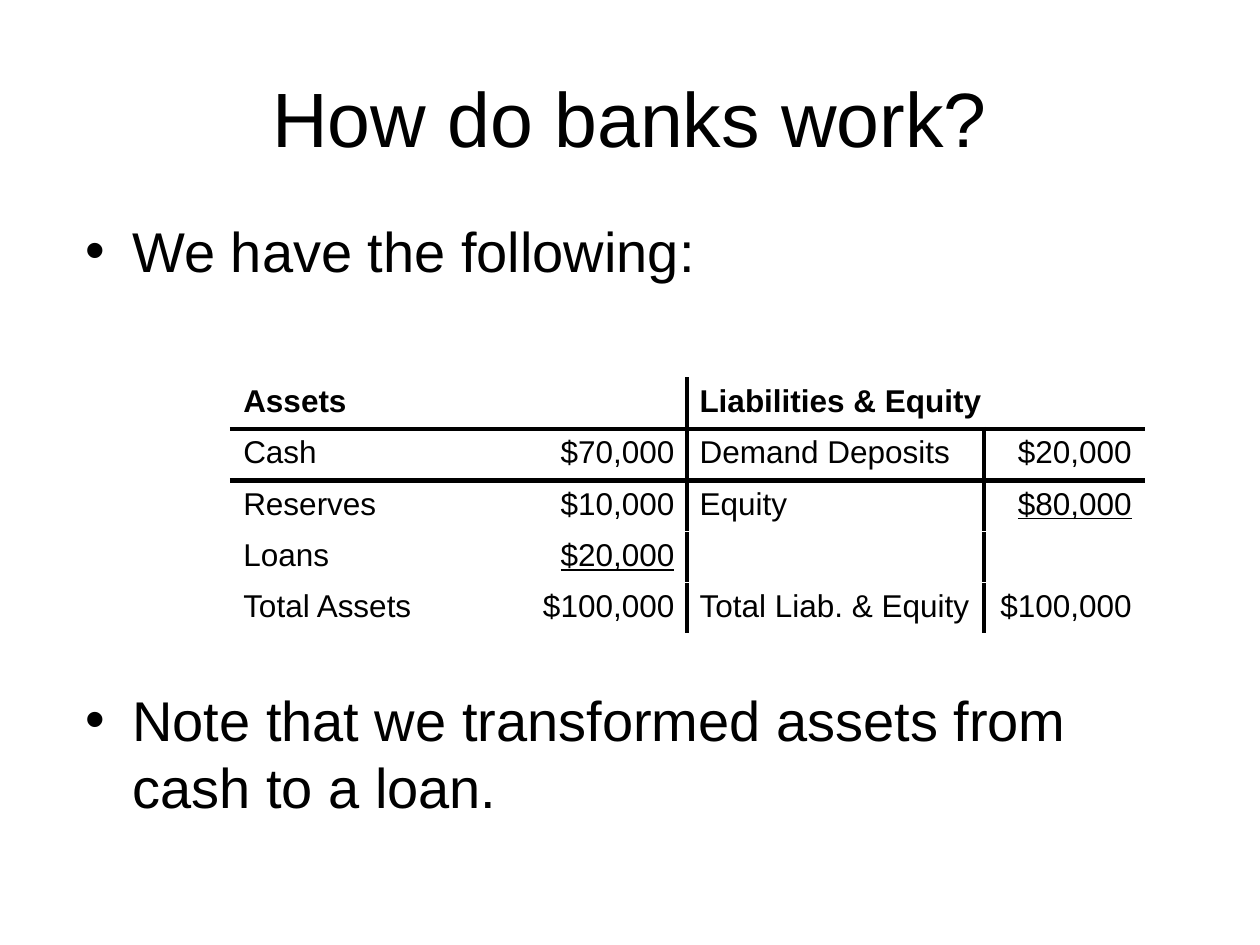
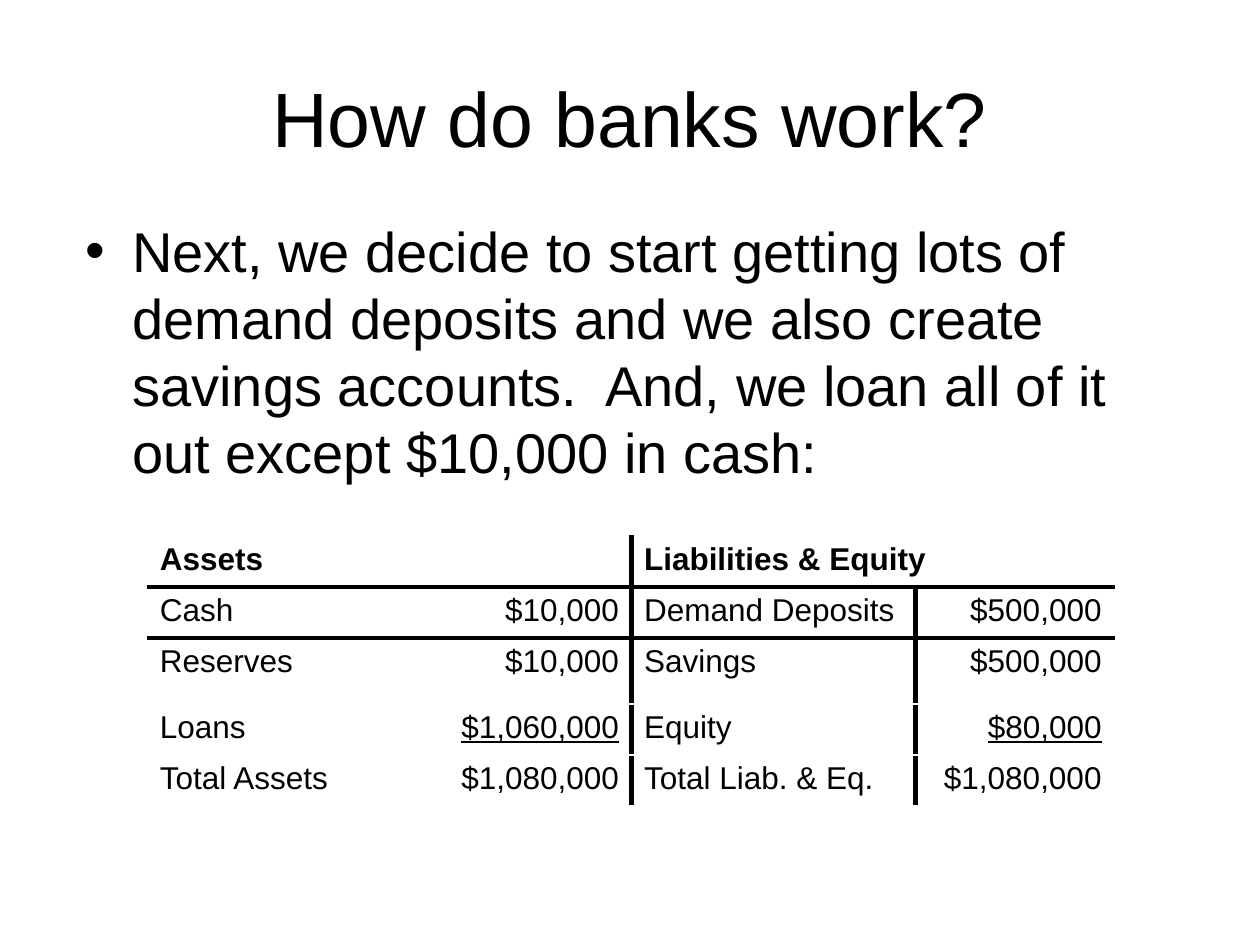
import dataclasses

import lxml.etree
import pptx
import pptx.dml.color
import pptx.enum.text
import pptx.oxml.ns
import pptx.util

Cm = pptx.util.Cm
Pt = pptx.util.Pt
Align = pptx.enum.text.PP_ALIGN
Anchor = pptx.enum.text.MSO_ANCHOR
qn = pptx.oxml.ns.qn

BLACK = pptx.dml.color.RGBColor(0, 0, 0)
WHITE = pptx.dml.color.RGBColor(255, 255, 255)
FONT = "Arial"
TITLE = "How do banks work?"
HEAD = ("Assets", "", "Liabilities & Equity", "")
ROW = 1.03


@dataclasses.dataclass(frozen=True)
class Box:
    left: float
    top: float
    width: float
    height: float


@dataclasses.dataclass(frozen=True)
class Sheet:
    left: float
    top: float
    cols: tuple[float, ...]
    rows: tuple[float, ...]
    lines: tuple[tuple[str, ...], ...]


@dataclasses.dataclass(frozen=True)
class Page:
    points: tuple[str, ...]
    gap: float
    sheet: Sheet


TITLE_BOX = Box(1.27, 0.76, 22.86, 3.18)
BODY_BOX = Box(1.47, 4.24, 22.86, 12.57)

PAGES = (
    Page(
        ("We have the following:", "Note that we transformed assets from cash to a loan."),
        230,
        Sheet(4.65, 7.62, (4.6, 4.6, 5.99, 3.23), (ROW,) * 5, (
            HEAD,
            ("Cash", "$70,000", "Demand Deposits", "$20,000"),
            ("Reserves", "$10,000", "Equity", "$80,000"),
            ("Loans", "$20,000", "", ""),
            ("Total Assets", "$100,000", "Total Liab. & Equity", "$100,000"),
        )),
    ),
    Page(
        ("Next, we decide to start getting lots of demand deposits and we also create "
         "savings accounts.  And, we loan all of it out except $10,000 in cash:",),
        0,
        Sheet(2.97, 10.8, (4.88, 4.88, 5.72, 4.01), (ROW, ROW, 1.33, ROW, ROW), (
            HEAD,
            ("Cash", "$10,000", "Demand Deposits", "$500,000"),
            ("Reserves", "$10,000", "Savings", "$500,000"),
            ("Loans", "$1,060,000", "Equity", "$80,000"),
            ("Total Assets", "$1,080,000", "Total Liab. & Eq.", "$1,080,000"),
        )),
    ),
)


def style(para, size: float, bold: bool = False, under: bool = False) -> None:
    for run in para.runs:
        run.font.name = FONT
        run.font.size = Pt(size)
        run.font.bold = bold
        run.font.underline = under
        run.font.color.rgb = BLACK


def add_text(slide, box: Box, lines: tuple[str, ...], size: float, pitch: float):
    shape = slide.shapes.add_textbox(Cm(box.left), Cm(box.top), Cm(box.width), Cm(box.height))
    frame = shape.text_frame
    frame.word_wrap = True
    frame.text = "\n".join(lines)
    for para in frame.paragraphs:
        para.line_spacing = Pt(pitch)
        style(para, size)
    return frame


def add_title(slide) -> None:
    frame = add_text(slide, TITLE_BOX, (TITLE,), 44, 52.7)
    frame.vertical_anchor = Anchor.MIDDLE
    frame.paragraphs[0].alignment = Align.CENTER


def add_points(slide, page: Page) -> None:
    frame = add_text(slide, BODY_BOX, page.points, 32, 38.3)
    for index, para in enumerate(frame.paragraphs):
        if index:
            para.space_before = Pt(page.gap)
        props = para._p.get_or_add_pPr()
        props.set("marL", str(Cm(0.95)))
        props.set("indent", str(-Cm(0.95)))
        lxml.etree.SubElement(props, qn("a:buFont"), typeface=FONT)
        lxml.etree.SubElement(props, qn("a:buChar"), char="•")


def add_edges(cell, dark: dict[str, bool]) -> None:
    props = cell._tc.get_or_add_tcPr()
    for index, (side, black) in enumerate(dark.items()):
        line = lxml.etree.Element(qn(f"a:ln{side}"), w=str(Pt(3 if black else 1)))
        fill = lxml.etree.SubElement(line, qn("a:solidFill"))
        lxml.etree.SubElement(fill, qn("a:srgbClr"), val=str(BLACK if black else WHITE))
        props.insert(index, line)


def add_sheet(slide, sheet: Sheet) -> None:
    last = len(sheet.rows) - 1
    frame = slide.shapes.add_table(
        len(sheet.rows), len(sheet.cols), Cm(sheet.left), Cm(sheet.top),
        Cm(sum(sheet.cols)), Cm(sum(sheet.rows)))
    table = frame.table
    table.first_row = False
    table.horz_banding = False
    for col, width in zip(table.columns, sheet.cols):
        col.width = Cm(width)
    for row, height in zip(table.rows, sheet.rows):
        row.height = Cm(height)
    table.cell(0, 2).merge(table.cell(0, 3))
    sums = {(max(r for r in range(last) if sheet.lines[r][c]), c) for c in (1, 3)}
    for r, line in enumerate(sheet.lines):
        for c, text in enumerate(line):
            cell = table.cell(r, c)
            cell.fill.solid()
            cell.fill.fore_color.rgb = WHITE
            add_edges(cell, {
                "L": c == 2 or (c == 3 and r > 0),
                "R": c == 1 or (c == 2 and r > 0),
                "T": r in (1, 2),
                "B": r in (0, 1),
            })
            if text:
                cell.text_frame.text = text
                para = cell.text_frame.paragraphs[0]
                para.alignment = Align.RIGHT if c % 2 else Align.LEFT
                style(para, 18, bold=r == 0, under=(r, c) in sums)


def main() -> None:
    deck = pptx.Presentation()
    deck.slide_width = Cm(25.4)
    deck.slide_height = Cm(19.05)
    for page in PAGES:
        slide = deck.slides.add_slide(deck.slide_layouts[6])
        add_title(slide)
        add_points(slide, page)
        add_sheet(slide, page.sheet)
    deck.save("out.pptx")


if __name__ == "__main__":
    main()
